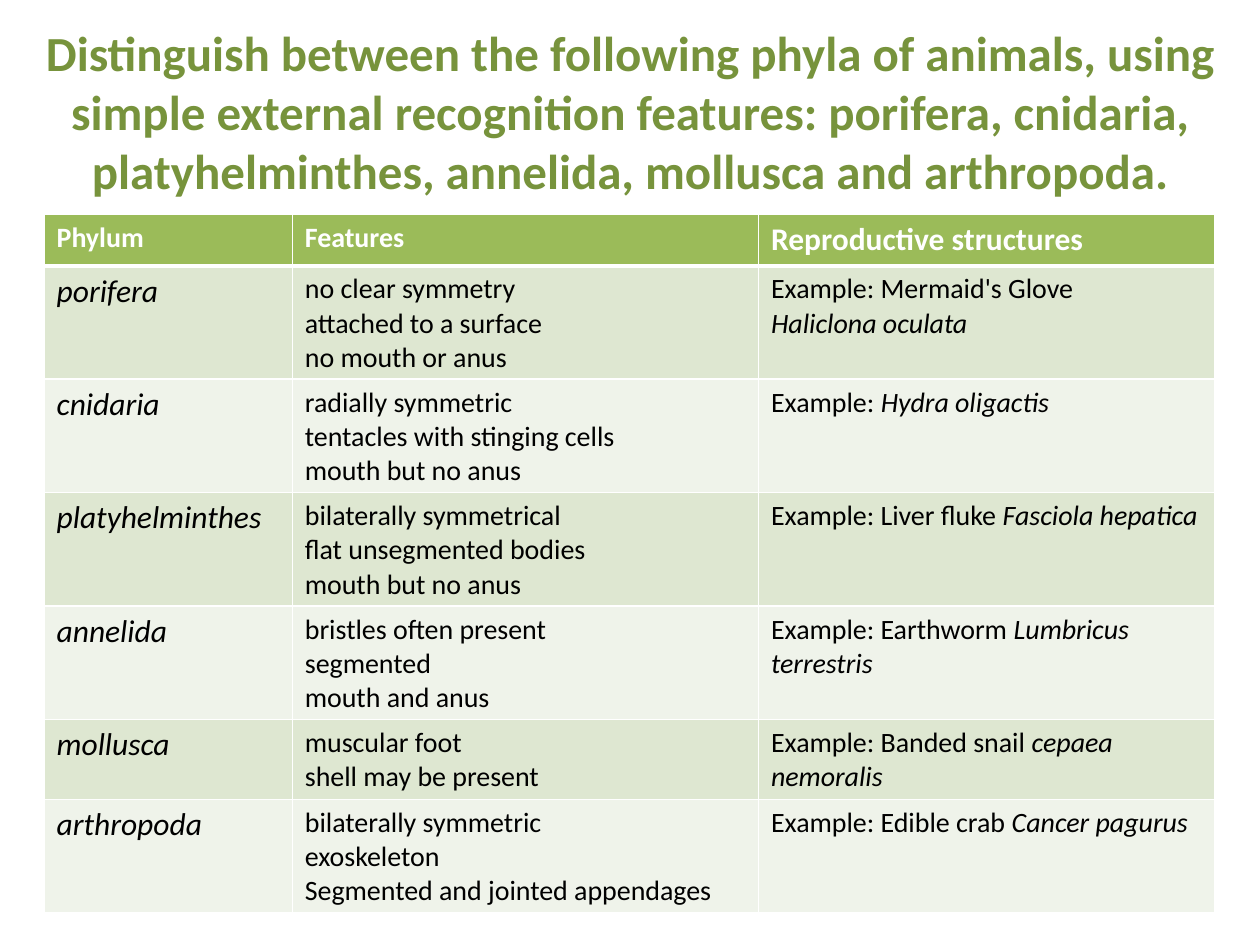
from typing import NamedTuple

from lxml.etree import SubElement
from pptx import Presentation
from pptx.dml.color import RGBColor
from pptx.enum.text import MSO_ANCHOR, MSO_AUTO_SIZE, PP_ALIGN as Align
from pptx.oxml.ns import qn
from pptx.util import Inches, Pt

COLORS = {
    "title": "77933C",
    "header": "9BBB59",
    "band_dark": "DEE7D1",
    "band_light": "EFF3EA",
    "white": "FFFFFF",
    "black": "000000",
}
FONT = "Calibri"
COL_WIDTHS = (1.97, 3.7, 3.62)
HEADER_HEIGHT = 0.41
ROW_HEIGHTS = {2: 0.63, 3: 0.9}  # by number of feature lines
TITLE = (
    "Distinguish between the following phyla of animals, using simple external "
    "recognition features: porifera, cnidaria, platyhelminthes, annelida, "
    "mollusca and arthropoda."
)
HEADERS = (("Phylum", 16), ("Features", 16), ("Reproductive structures", 18))


class Phylum(NamedTuple):
    name: str
    features: tuple[str, ...]
    example: str
    species: str
    species_below: bool = False


PHYLA = (
    Phylum("porifera",
           ("no clear symmetry", "attached to a surface", "no mouth or anus"),
           "Example: Mermaid's Glove", "Haliclona oculata", species_below=True),
    Phylum("cnidaria",
           ("radially symmetric", "tentacles with stinging cells", "mouth but no anus"),
           "Example: ", "Hydra oligactis"),
    Phylum("platyhelminthes",
           ("bilaterally symmetrical", "flat unsegmented bodies", "mouth but no anus"),
           "Example: Liver fluke ", "Fasciola hepatica"),
    Phylum("annelida",
           ("bristles often present", "segmented", "mouth and anus"),
           "Example: Earthworm ", "Lumbricus terrestris"),
    Phylum("mollusca",
           ("muscular foot", "shell may be present"),
           "Example: Banded snail ", "cepaea nemoralis"),
    Phylum("arthropoda",
           ("bilaterally symmetric", "exoskeleton", "Segmented and jointed appendages"),
           "Example: Edible crab ", "Cancer pagurus"),
)


def add_text(p, text: str, *, size: float = 16, color: str = "black",
             bold: bool = False, italic: bool = False) -> None:
    """Add one formatted run to a paragraph."""
    r = p.add_run()
    r.text = text
    r.font.name = FONT
    r.font.size = Pt(size)
    r.font.bold = bold
    r.font.italic = italic
    r.font.color.rgb = RGBColor.from_string(COLORS[color])


def style_cell(cell, fill: str, top: float = 1, bottom: float = 1) -> None:
    """Give a cell white borders (widths in points) and a solid fill."""
    tc_pr = cell._tc.get_or_add_tcPr()
    for tag, width in (("lnL", 1), ("lnR", 1), ("lnT", top), ("lnB", bottom)):
        ln = SubElement(tc_pr, qn(f"a:{tag}"), w=str(Pt(width)))
        SubElement(SubElement(ln, qn("a:solidFill")), qn("a:srgbClr"),
                   val=COLORS["white"])
    cell.fill.solid()
    cell.fill.fore_color.rgb = RGBColor.from_string(COLORS[fill])


def add_title(s) -> None:
    sp = s.shapes.title
    sp.left, sp.top = Inches(0), Inches(0.13)
    sp.width, sp.height = Inches(10), Inches(1.51)
    tf = sp.text_frame
    tf.word_wrap = True
    tf.auto_size = MSO_AUTO_SIZE.SHAPE_TO_FIT_TEXT
    tf.vertical_anchor = MSO_ANCHOR.TOP
    p = tf.paragraphs[0]
    p.alignment = Align.CENTER
    add_text(p, TITLE, size=28, color="title", bold=True)


def fill_phylum_row(cells, phylum: Phylum) -> None:
    name, features, example = (cell.text_frame for cell in cells)
    add_text(name.paragraphs[0], phylum.name, size=18, italic=True)
    for i, feature in enumerate(phylum.features):
        p = features.add_paragraph() if i else features.paragraphs[0]
        add_text(p, feature)
    p = example.paragraphs[0]
    add_text(p, phylum.example)
    if phylum.species_below:
        p = example.add_paragraph()
    add_text(p, phylum.species, italic=True)


def add_phyla_table(s) -> None:
    heights = [HEADER_HEIGHT] + [ROW_HEIGHTS[len(ph.features)] for ph in PHYLA]
    table = s.shapes.add_table(
        len(heights), len(COL_WIDTHS), Inches(0.35), Inches(1.7),
        Inches(sum(COL_WIDTHS)), Inches(sum(heights))).table
    for col, width in zip(table.columns, COL_WIDTHS):
        col.width = Inches(width)
    for row, height in zip(table.rows, heights):
        row.height = Inches(height)

    # Header row with a thick line below
    for cell, (text, size) in zip(table.rows[0].cells, HEADERS):
        style_cell(cell, "header", bottom=3)
        add_text(cell.text_frame.paragraphs[0], text, size=size,
                 color="white", bold=True)

    # Banded rows, one per phylum
    for i, phylum in enumerate(PHYLA):
        cells = list(table.rows[i + 1].cells)
        for cell in cells:
            style_cell(cell, "band_light" if i % 2 else "band_dark",
                       top=1 if i else 3)
        fill_phylum_row(cells, phylum)


def main() -> None:
    prs = Presentation()
    prs.slide_width, prs.slide_height = Inches(10), Inches(7.5)
    s = prs.slides.add_slide(prs.slide_layouts[5])
    add_title(s)
    add_phyla_table(s)
    prs.save("out.pptx")


if __name__ == "__main__":
    main()
